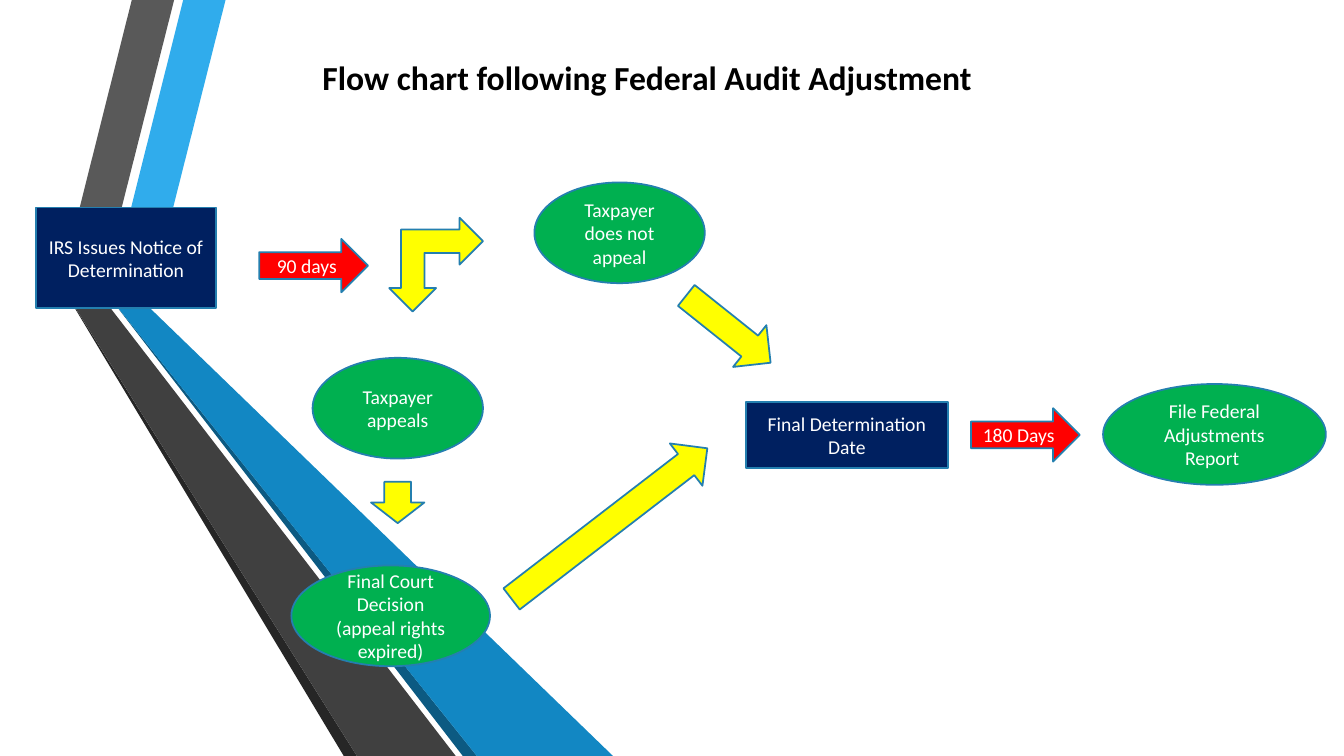
from pptx import Presentation
from pptx.dml.color import RGBColor
from pptx.enum.shapes import MSO_SHAPE
from pptx.enum.text import MSO_ANCHOR, MSO_AUTO_SIZE, PP_ALIGN
from pptx.util import Inches, Pt

COLORS = {
    "navy": "002060", "red": "FF0000", "green": "00B050", "yellow": "FFFF00",
    "outline": "247FAF", "white": "FFFFFF", "black": "000000",
    "sky": "30ACEC", "blue": "1287C3", "deep_blue": "0C5A82",
    "gray": "595959", "dark_gray": "404040", "charcoal": "262626",
}


class FlowSlide:
    font = "Calibri"

    def __init__(self, presentation):
        self.slide = presentation.slides.add_slide(presentation.slide_layouts[6])
        self.shapes = self.slide.shapes
        self.slide.background.fill.solid()
        self.slide.background.fill.fore_color.rgb = self.color("white")

    def color(self, name):
        return RGBColor.from_string(COLORS[name])

    def paint(self, shape, fill):
        shape.shadow.inherit = False
        shape.fill.solid()
        shape.fill.fore_color.rgb = self.color(fill)

    def style(self, paragraph, size, color, bold=False):
        paragraph.font.name = self.font
        paragraph.font.size = Pt(size)
        paragraph.font.bold = bold
        paragraph.font.color.rgb = self.color(color)

    def ribbon(self, fill, points):
        start, *rest = [(Inches(x), Inches(y)) for x, y in points]
        builder = self.shapes.build_freeform(*start, scale=1.0)
        builder.add_line_segments(rest, close=True)
        band = builder.convert_to_shape()
        self.paint(band, fill)
        band.line.fill.background()

    def node(self, kind, fill, box, text="", rotation=0):
        node = self.shapes.add_shape(kind, *map(Inches, box))
        self.paint(node, fill)
        node.line.color.rgb = self.color("outline")
        node.line.width = Pt(1.25)
        node.rotation = rotation
        if text:
            frame = node.text_frame
            frame.word_wrap = True
            frame.vertical_anchor = MSO_ANCHOR.MIDDLE
            paragraph = frame.paragraphs[0]
            paragraph.text = text
            paragraph.alignment = PP_ALIGN.CENTER
            self.style(paragraph, 14, "white")

    def step(self, box, text):
        self.node(MSO_SHAPE.RECTANGLE, "navy", box, text)

    def outcome(self, box, text):
        self.node(MSO_SHAPE.OVAL, "green", box, text)

    def deadline(self, left, top, text):
        self.node(MSO_SHAPE.RIGHT_ARROW, "red", (left, top, 1.08, 0.53), text)

    def route(self, kind, box, rotation=0):
        self.node(kind, "yellow", box, rotation=rotation)

    def title(self, box, text):
        heading = self.shapes.add_textbox(*map(Inches, box))
        frame = heading.text_frame
        frame.word_wrap = False
        frame.auto_size = MSO_AUTO_SIZE.SHAPE_TO_FIT_TEXT
        frame.paragraphs[0].text = text
        self.style(frame.paragraphs[0], 24, "black", bold=True)


def main():
    presentation = Presentation()
    presentation.slide_width = Inches(13.33)
    presentation.slide_height = Inches(7.5)
    flow = FlowSlide(presentation)

    flow.ribbon("sky", [(1.08, 2.94), (1.47, 3.04), (2.24, -0.01), (1.82, -0.01)])
    flow.ribbon("gray", [(0.99, 2.92), (1.73, -0.01), (1.31, -0.01), (0.6, 2.82)])
    flow.ribbon("charcoal", [(0.6, 2.82), (3.41, 7.5), (3.54, 7.5)])
    flow.ribbon("deep_blue", [(1.08, 2.94), (4.59, 7.5), (4.73, 7.5)])
    flow.ribbon("blue", [(1.08, 2.94), (4.73, 7.5), (6.08, 7.5), (1.47, 3.04)])
    flow.ribbon("dark_gray", [(0.6, 2.82), (3.54, 7.5), (4.52, 7.5), (1.06, 3.01), (0.99, 2.92)])

    flow.title((3.1, 0.52, 6.78, 0.5), "Flow chart following Federal Audit Adjustment")

    flow.step((0.36, 2.06, 1.78, 1), "IRS Issues Notice of Determination")
    flow.deadline(2.57, 2.37, "90 days")
    flow.route(MSO_SHAPE.LEFT_UP_ARROW, (3.86, 2.16, 0.93, 0.93), 180)

    flow.outcome((5.3, 1.81, 1.69, 1), "Taxpayer does not appeal")
    flow.route(MSO_SHAPE.RIGHT_ARROW, (6.69, 3, 1.07, 0.53), 38.6)

    flow.outcome((3.1, 3.55, 1.69, 1), "Taxpayer appeals")
    flow.route(MSO_SHAPE.DOWN_ARROW, (3.68, 4.78, 0.53, 0.41))
    flow.outcome((2.89, 5.61, 1.97, 1), "Final Court Decision (appeal rights expired)")
    flow.route(MSO_SHAPE.RIGHT_ARROW, (4.82, 4.93, 2.45, 0.53), 322.4)

    flow.step((7.4, 3.99, 2, 0.65), "Final Determination Date")
    flow.deadline(9.63, 4.05, "180 Days")
    flow.outcome((10.94, 3.81, 2.21, 1), "File Federal Adjustments Report ")

    presentation.save("out.pptx")


if __name__ == "__main__":
    main()
